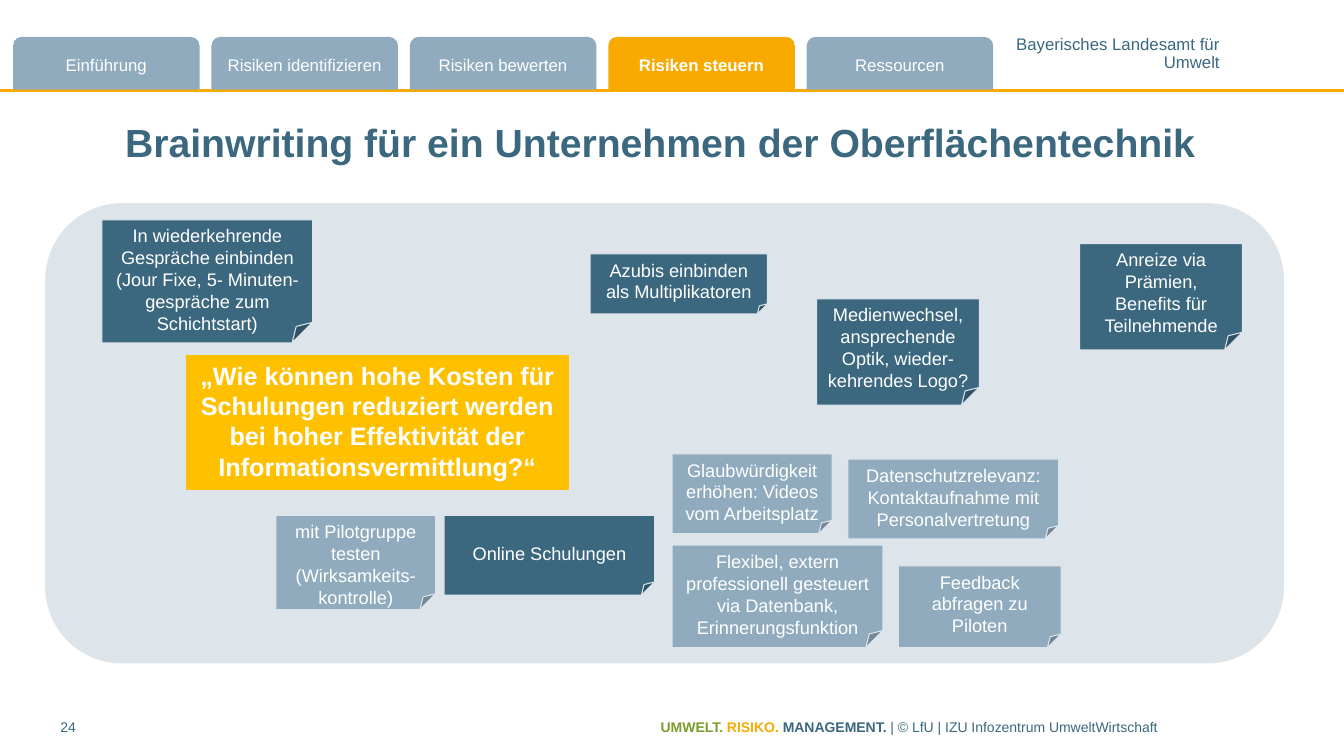
from pptx import Presentation
from pptx.dml.color import RGBColor
from pptx.enum.shapes import MSO_CONNECTOR, MSO_SHAPE
from pptx.enum.text import MSO_ANCHOR as Anchor, PP_ALIGN as Align
from pptx.oxml.ns import qn
from pptx.util import Cm, Pt
from lxml.etree import SubElement

FONT = "Arial"
WHITE = RGBColor(0xFF, 0xFF, 0xFF)
PETROL = RGBColor(0x3B, 0x68, 0x7F)
BLUE_GREY = RGBColor(0x90, 0xAB, 0xBE)
PALE_GREY = RGBColor(0xDE, 0xE5, 0xEA)
ORANGE = RGBColor(0xF9, 0xAA, 0x00)
YELLOW = RGBColor(0xFF, 0xC0, 0x00)
GREEN = RGBColor(0x7B, 0x9C, 0x2A)

TABS = ["Einführung", "Risiken identifizieren", "Risiken bewerten",
        "Risiken steuern", "Ressourcen"]
ACTIVE_TAB = "Risiken steuern"

NOTES = [
    ("In wiederkehrende Gespräche einbinden (Jour Fixe, 5- Minuten-gespräche zum Schichtstart)",
     PETROL, (2.57, 5.54, 5.31, 3.1)),
    ("Azubis einbinden als Multiplikatoren", PETROL, (14.87, 6.4, 4.47, 1.51)),
    ("Medienwechsel, ansprechende Optik, wieder-kehrendes Logo?",
     PETROL, (20.58, 7.53, 4.1, 2.68)),
    ("Anreize via Prämien, Benefits für Teilnehmende", PETROL, (27.21, 6.14, 4.1, 2.68)),
    ("Glaubwürdigkeit erhöhen: Videos vom Arbeitsplatz",
     BLUE_GREY, (16.94, 11.44, 4.03, 2.01)),
    ("Datenschutzrelevanz: Kontaktaufnahme mit Personalvertretung",
     BLUE_GREY, (21.37, 11.57, 5.31, 2.01)),
    ("mit Pilotgruppe testen (Wirksamkeits-kontrolle)",
     BLUE_GREY, (6.95, 12.99, 4.03, 2.37)),
    ("Flexibel, extern professionell gesteuert via Datenbank, Erinnerungsfunktion",
     BLUE_GREY, (16.94, 13.74, 5.31, 2.58)),
    ("Feedback abfragen zu Piloten", BLUE_GREY, (22.64, 14.26, 4.1, 2.06)),
]


def add_run(paragraph, text, size, color, bold=False):
    run = paragraph.add_run()
    run.text = text
    run.font.name = FONT
    run.font.size = Pt(size)
    run.font.color.rgb = color
    run.font.bold = bold


def add_box(slide, kind, position, fill, line=None):
    shape = slide.shapes.add_shape(kind, *map(Cm, position))
    shape.shadow.inherit = False
    shape.fill.solid()
    shape.fill.fore_color.rgb = fill
    if line is None:
        shape.line.fill.background()
    else:
        shape.line.color.rgb = line
        shape.line.width = Pt(0.75)
    return shape


def fill_box(shape, text, size, bold=False, anchor=Anchor.TOP):
    frame = shape.text_frame
    frame.word_wrap = True
    frame.vertical_anchor = anchor
    paragraph = frame.paragraphs[0]
    paragraph.alignment = Align.CENTER
    add_run(paragraph, text, size, WHITE, bold)
    return frame


def add_text(slide, position, lines, size, align=Align.LEFT, anchor=Anchor.TOP,
             wrap=True, padding=0.13, spacing=None):
    frame = slide.shapes.add_textbox(*map(Cm, position)).text_frame
    frame.word_wrap = wrap
    frame.vertical_anchor = anchor
    frame.margin_left = frame.margin_right = 0
    frame.margin_top = frame.margin_bottom = Cm(padding)
    for index, runs in enumerate(lines):
        paragraph = frame.add_paragraph() if index else frame.paragraphs[0]
        paragraph.alignment = align
        paragraph.line_spacing = spacing
        for text, color, bold in runs:
            add_run(paragraph, text, size, color, bold)


def add_tab(slide, index, label):
    active = label == ACTIVE_TAB
    tab = add_box(slide, MSO_SHAPE.ROUND_2_SAME_RECTANGLE,
                  (0.33 + 5 * index, 0.93, 4.7, 1.33), ORANGE if active else BLUE_GREY)
    frame = fill_box(tab, label, 12, active, Anchor.MIDDLE)
    frame.margin_left = frame.margin_right = Cm(0.1)


def add_note(slide, text, fill, position):
    note = add_box(slide, MSO_SHAPE.FOLDED_CORNER, position, fill, PALE_GREY)
    return fill_box(note, text, 13)


def add_rule(slide, width, top):
    rule = slide.shapes.add_connector(MSO_CONNECTOR.STRAIGHT, 0, Cm(top), width, Cm(top))
    rule.line.color.rgb = ORANGE
    rule.line.width = Pt(2)
    SubElement(rule._element.spPr, qn("a:effectLst"))


def main():
    presentation = Presentation()
    presentation.slide_width = Cm(33.87)
    presentation.slide_height = Cm(19.05)
    slide = presentation.slides.add_slide(presentation.slide_layouts[6])

    add_rule(slide, presentation.slide_width, 2.28)
    add_text(slide, (25.58, 0.94, 5.16, 0.86),
             [[("Bayerisches Landesamt für", PETROL, False)], [("Umwelt", PETROL, False)]],
             12, Align.RIGHT, wrap=False, padding=0, spacing=0.85)
    for index, label in enumerate(TABS):
        add_tab(slide, index, label)
    add_text(slide, (1.14, 2.87, 30.99, 1.4),
             [[("Brainwriting für ein Unternehmen der Oberflächentechnik", PETROL, True)]],
             28, Align.CENTER, Anchor.MIDDLE)

    add_box(slide, MSO_SHAPE.ROUNDED_RECTANGLE, (1.14, 5.12, 31.22, 11.6), PALE_GREY)
    question = add_box(slide, MSO_SHAPE.RECTANGLE, (4.7, 8.95, 9.62, 3.39), YELLOW, YELLOW)
    fill_box(question, "„Wie können hohe Kosten für Schulungen reduziert werden "
             "bei hoher Effektivität der Informationsvermittlung?“", 18, True)
    for text, fill, position in NOTES:
        add_note(slide, text, fill, position)
    online = add_note(slide, "Online Schulungen", PETROL, (11.19, 12.99, 5.31, 2.01))
    online.margin_top = Cm(0.68)

    add_text(slide, (1.52, 17.98, 1.78, 0.79), [[("24", PETROL, False)]], 10)
    add_text(slide, (16.65, 17.98, 16.15, 0.79),
             [[("UMWELT. ", GREEN, True), ("RISIKO. ", ORANGE, True),
               ("MANAGEMENT. ", PETROL, True),
               ("| © LfU | IZU Infozentrum UmweltWirtschaft", PETROL, False)]], 10)
    presentation.save("out.pptx")


if __name__ == "__main__":
    main()
